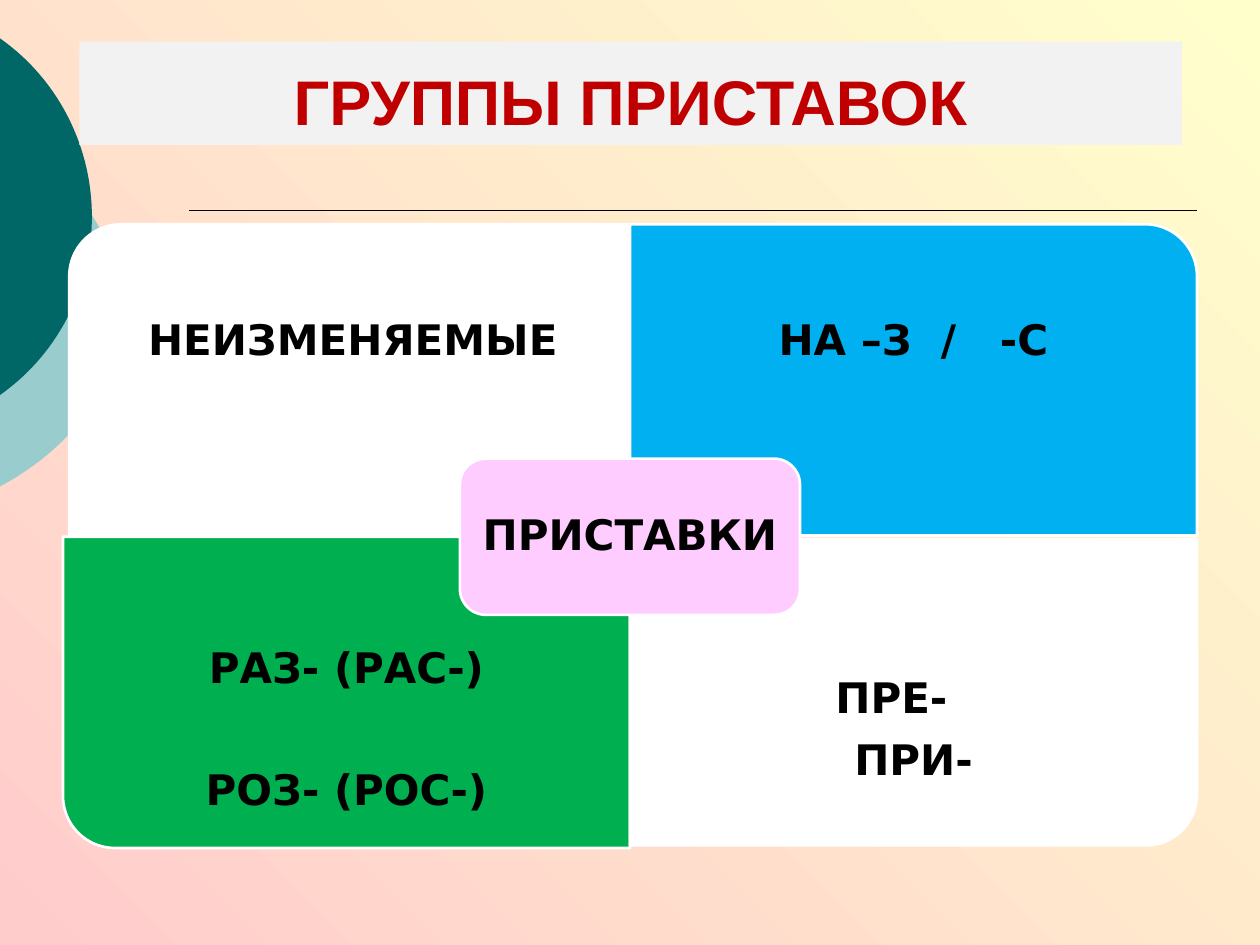
import math

from lxml import etree
from pptx import Presentation
from pptx.dml.color import RGBColor
from pptx.enum import shapes, text
from pptx.oxml.ns import qn
from pptx.util import Inches, Pt

BLACK, WHITE = "000000", "FFFFFF"
ROUND_ONE = shapes.MSO_SHAPE.ROUND_1_RECTANGLE
ROUND_ALL = shapes.MSO_SHAPE.ROUNDED_RECTANGLE


def color(value):
    return RGBColor.from_string(value)


def paint_background(page):
    fill = page.background.fill
    fill.gradient()
    fill.gradient_angle = 45
    for stop, value in zip(fill.gradient_stops, ("FFCCCC", "FFFFCC")):
        stop.color.rgb = color(value)


def add_disc_edge(page, center_x, center_y, radius_x, radius_y, fill):
    """Draw the part of an ellipse that lies right of the slide's left edge."""
    limit = math.acos(-center_x / radius_x)
    steps = 60
    angles = [limit * (2 * i / steps - 1) for i in range(steps + 1)]
    points = [(Inches(center_x + radius_x * math.cos(a)),
               Inches(center_y + radius_y * math.sin(a))) for a in angles]
    builder = page.shapes.build_freeform(*points[0])
    builder.add_line_segments(points[1:])
    disc = builder.convert_to_shape()
    disc.shadow.inherit = False
    disc.fill.solid()
    disc.fill.fore_color.rgb = color(fill)
    disc.line.fill.background()


def add_rule(page, left, right, top):
    rule = page.shapes.add_connector(
        shapes.MSO_CONNECTOR.STRAIGHT,
        Inches(left), Inches(top), Inches(right), Inches(top))
    rule.line.color.rgb = color(BLACK)
    rule.line.width = Pt(1)
    etree.SubElement(rule.element.spPr, qn("a:effectLst"))


def format_text(para, font, size, value):
    para.alignment = text.PP_ALIGN.CENTER
    for span in para.runs:
        span.font.name = font
        span.font.size = Pt(size)
        span.font.bold = True
        span.font.color.rgb = color(value)


def set_title(page, wording):
    title = page.shapes.title
    title.left, title.top = Inches(0.63), Inches(0.33)
    title.width, title.height = Inches(8.75), Inches(0.82)
    title.fill.solid()
    title.fill.fore_color.rgb = color("F2F2F2")
    frame = title.text_frame
    frame.text = wording
    frame.vertical_anchor = text.MSO_ANCHOR.BOTTOM
    format_text(frame.paragraphs[0], "Arial", 36, "C00000")
    # Bring the title in front of the decoration
    page.shapes.element.append(title.element)


def add_panel(page, kind, left, top, width, height, fill, rotation=0):
    """Add a panel that covers the given area after its rotation."""
    middle_x, middle_y = left + width / 2, top + height / 2
    if rotation % 180:
        width, height = height, width
    panel = page.shapes.add_shape(
        kind, Inches(middle_x - width / 2), Inches(middle_y - height / 2),
        Inches(width), Inches(height))
    panel.rotation = rotation
    panel.shadow.inherit = False
    panel.fill.solid()
    panel.fill.fore_color.rgb = color(fill)
    panel.line.color.rgb = color(WHITE)
    panel.line.width = Pt(1.5)


def add_label(page, left, top, width, height, lines, inset=0.19, gap=9):
    box = page.shapes.add_textbox(
        Inches(left), Inches(top), Inches(width), Inches(height))
    frame = box.text_frame
    frame.word_wrap = True
    frame.vertical_anchor = text.MSO_ANCHOR.MIDDLE
    frame.margin_left = frame.margin_right = Inches(inset)
    frame.margin_top = frame.margin_bottom = Inches(inset)
    frame.text = "\n".join(lines)
    for para in frame.paragraphs:
        format_text(para, "DejaVu Sans", 24, BLACK)
        para.line_spacing = 0.9
    for para in frame.paragraphs[:-1]:
        para.space_after = Pt(gap)
    return box


def indent_last_line(box, indent):
    properties = list(box.element.iter(qn("a:pPr")))[-1]
    properties.set("marL", str(Inches(indent)))


def main():
    deck = Presentation()
    deck.slide_width, deck.slide_height = Inches(10), Inches(7.5)
    page = deck.slides.add_slide(deck.slide_layouts[5])

    paint_background(page)
    add_disc_edge(page, -1.29, 2.46, 2.25, 1.71, "99CCCC")
    add_disc_edge(page, -0.96, 1.72, 1.69, 1.72, "006666")
    add_rule(page, 1.5, 9.5, 1.67)
    set_title(page, "ГРУППЫ ПРИСТАВОК")

    add_panel(page, ROUND_ONE, 0.55, 1.78, 4.5, 2.47, WHITE, 270)
    add_label(page, 0.55, 1.78, 4.5, 1.86, ["НЕИЗМЕНЯЕМЫЕ"])

    add_panel(page, ROUND_ONE, 5, 1.78, 4.5, 2.47, "00B0F0")
    add_label(page, 5, 1.78, 4.5, 1.86, ["НА –З  /   -С"])

    add_panel(page, ROUND_ONE, 0.5, 4.26, 4.5, 2.47, "00B050", 180)
    add_label(page, 0.5, 4.87, 4.5, 1.86, ["РАЗ- (РАС-)", "РОЗ- (РОС-)"], gap=43.5)

    add_panel(page, ROUND_ONE, 5, 4.28, 4.5, 2.43, WHITE, 90)
    pair = add_label(page, 5, 4.89, 4.15, 1.82, ["ПРЕ-", "ПРИ-"])
    indent_last_line(pair, 0.35)

    add_panel(page, ROUND_ALL, 3.65, 3.64, 2.7, 1.24, "FFCCFF")
    add_label(page, 3.71, 3.7, 2.58, 1.12, ["ПРИСТАВКИ"], inset=0.1)

    deck.save("out.pptx")


if __name__ == "__main__":
    main()
